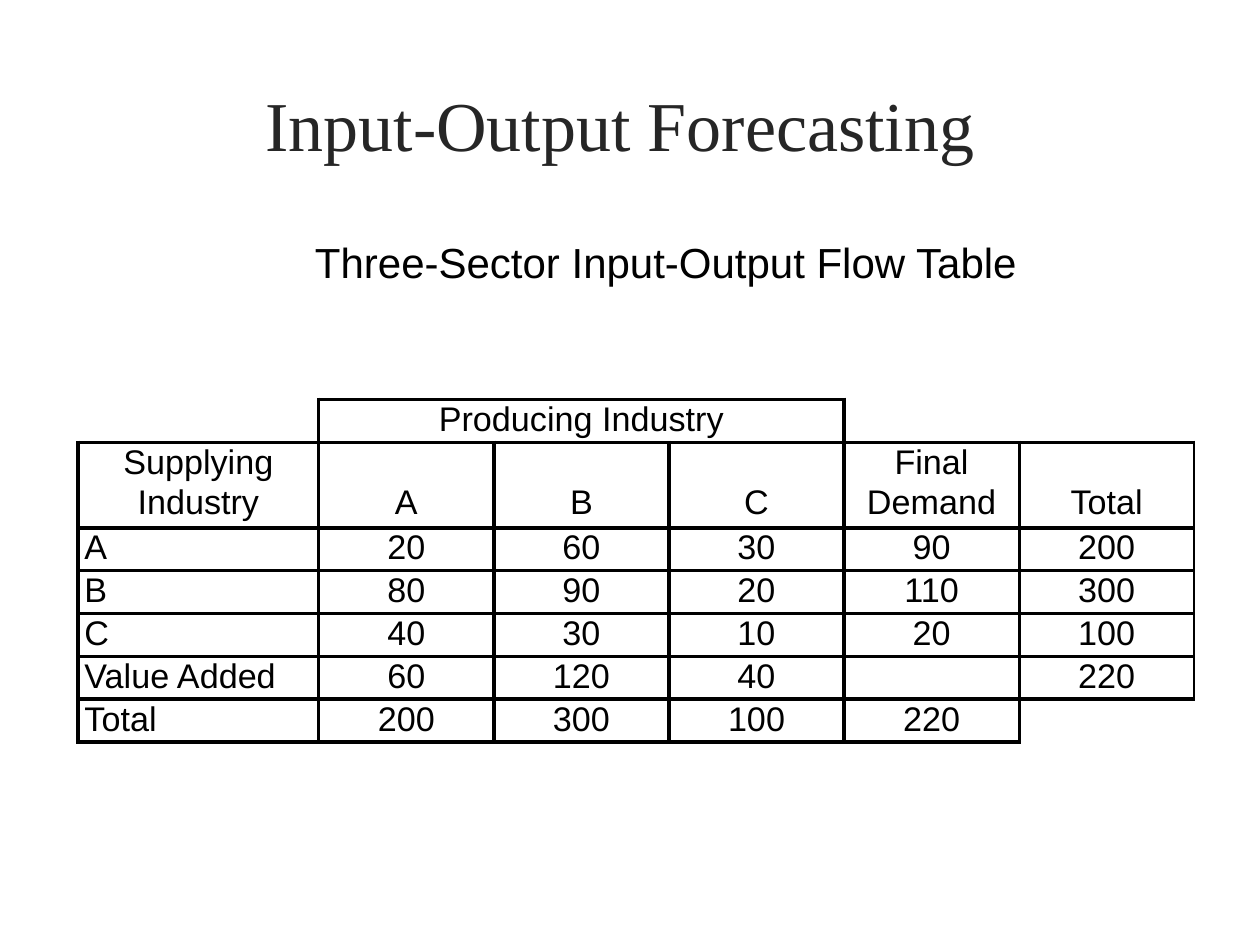
from pptx import Presentation
from pptx.dml.color import RGBColor
from pptx.enum.text import MSO_ANCHOR as Anchor, MSO_AUTO_SIZE as Fit, PP_ALIGN as Align
from pptx.oxml.ns import qn
from pptx.util import Inches, Pt
from lxml.etree import SubElement

TITLE = "Input-Output Forecasting"
CAPTION = "Three-Sector Input-Output Flow Table"
SPAN = "Producing Industry"
ROWS = [
    [None, SPAN, SPAN, SPAN, None, None],
    ["Supplying\nIndustry", "A", "B", "C", "Final\nDemand", "Total"],
    ["A", "20", "60", "30", "90", "200"],
    ["B", "80", "90", "20", "110", "300"],
    ["C", "40", "30", "10", "20", "100"],
    ["Value Added", "60", "120", "40", "", "220"],
    ["Total", "200", "300", "100", "220", None],
]
LEFT, TOP, UNIT = 0.62, 3.17, 0.34
WIDTHS = [1.91] + [1.39] * 5
HEIGHTS = [UNIT, 2 * UNIT] + [UNIT] * 5
SIDES = {"a:lnL": (0, -1), "a:lnR": (0, 1), "a:lnT": (-1, 0), "a:lnB": (1, 0)}
INK = "000000"


def style(frame, face, size, tint, align, lead=None):
    """Format every paragraph and run of a text frame."""
    for para in frame.paragraphs:
        para.alignment = align
        if lead:
            para.line_spacing = Pt(lead)
        for run in para.runs:
            font = run.font
            font.name, font.size = face, Pt(size)
            font.color.rgb = RGBColor.from_string(tint)


def inset(box, top=0, low=0, left=0):
    """Set the inner margins of a frame or cell."""
    box.margin_left, box.margin_right = Inches(left), 0
    box.margin_top, box.margin_bottom = Inches(top), Inches(low)


def boxed(row, col):
    """Tell whether a grid place holds a ruled cell."""
    inside = 0 <= row < len(ROWS) and 0 <= col < len(WIDTHS)
    return inside and ROWS[row][col] is not None


def rule(cell, row, col):
    """Draw the edges that touch a ruled cell."""
    props = cell._tc.get_or_add_tcPr()
    for spot, (tag, (down, over)) in enumerate(SIDES.items()):
        edge = SubElement(props, qn(tag))
        props.insert(spot, edge)
        if boxed(row, col) or boxed(row + down, col + over):
            last = over == 1 and col == len(WIDTHS) - 1
            edge.set("w", str(Pt(1.5 if last else 2.25)))
            fill = SubElement(edge, qn("a:solidFill"))
            SubElement(fill, qn("a:srgbClr")).set("val", INK)
        else:
            SubElement(edge, qn("a:noFill"))


def add_flow(slide):
    """Build the flow table."""
    area = [Inches(n) for n in (LEFT, TOP, sum(WIDTHS), sum(HEIGHTS))]
    table = slide.shapes.add_table(len(ROWS), len(WIDTHS), *area).table
    table.first_row = table.horz_banding = False
    for col, width in zip(table.columns, WIDTHS):
        col.width = Inches(width)
    for line, high in zip(table.rows, HEIGHTS):
        line.height = Inches(high)
    table.cell(0, 1).merge(table.cell(0, 3))
    table.cell(0, 4).merge(table.cell(0, 5))
    for row, texts in enumerate(ROWS):
        for col, text in enumerate(texts):
            cell = table.cell(row, col)
            cell.fill.background()
            rule(cell, row, col)
            name = col == 0 and row > 1
            inset(cell, low=0.05 if row == 1 else 0, left=0.05 if name else 0)
            cell.vertical_anchor = Anchor.BOTTOM if row == 1 else Anchor.TOP
            if text and not cell.is_spanned:
                cell.text_frame.text = text
                align = Align.LEFT if name else Align.CENTER
                style(cell.text_frame, "Arial", 19.5, INK, align, 22.5)


def place(shape, area, text, top):
    """Position a text shape and give it its wording."""
    shape.left, shape.top, shape.width, shape.height = map(Inches, area)
    frame = shape.text_frame
    frame.text, frame.word_wrap, frame.auto_size = text, True, Fit.NONE
    inset(frame, top)
    return frame


def main():
    """Build and save the slide."""
    deck = Presentation()
    deck.slide_width, deck.slide_height = Inches(10), Inches(7.5)
    slide = deck.slides.add_slide(deck.slide_layouts[5])
    head = place(slide.shapes.title, (1.2, 0.18, 7.44, 1.43), TITLE, 0.17)
    head.vertical_anchor = Anchor.MIDDLE
    style(head, "Times New Roman", 40, "262626", Align.CENTER)
    add_flow(slide)
    note = slide.shapes.add_textbox(0, 0, 0, 0)
    frame = place(note, (2.5, 1.86, 5.6, 0.43), CAPTION, 0.02)
    style(frame, "Arial", 24, INK, Align.LEFT)
    deck.save("out.pptx")


if __name__ == "__main__":
    main()
